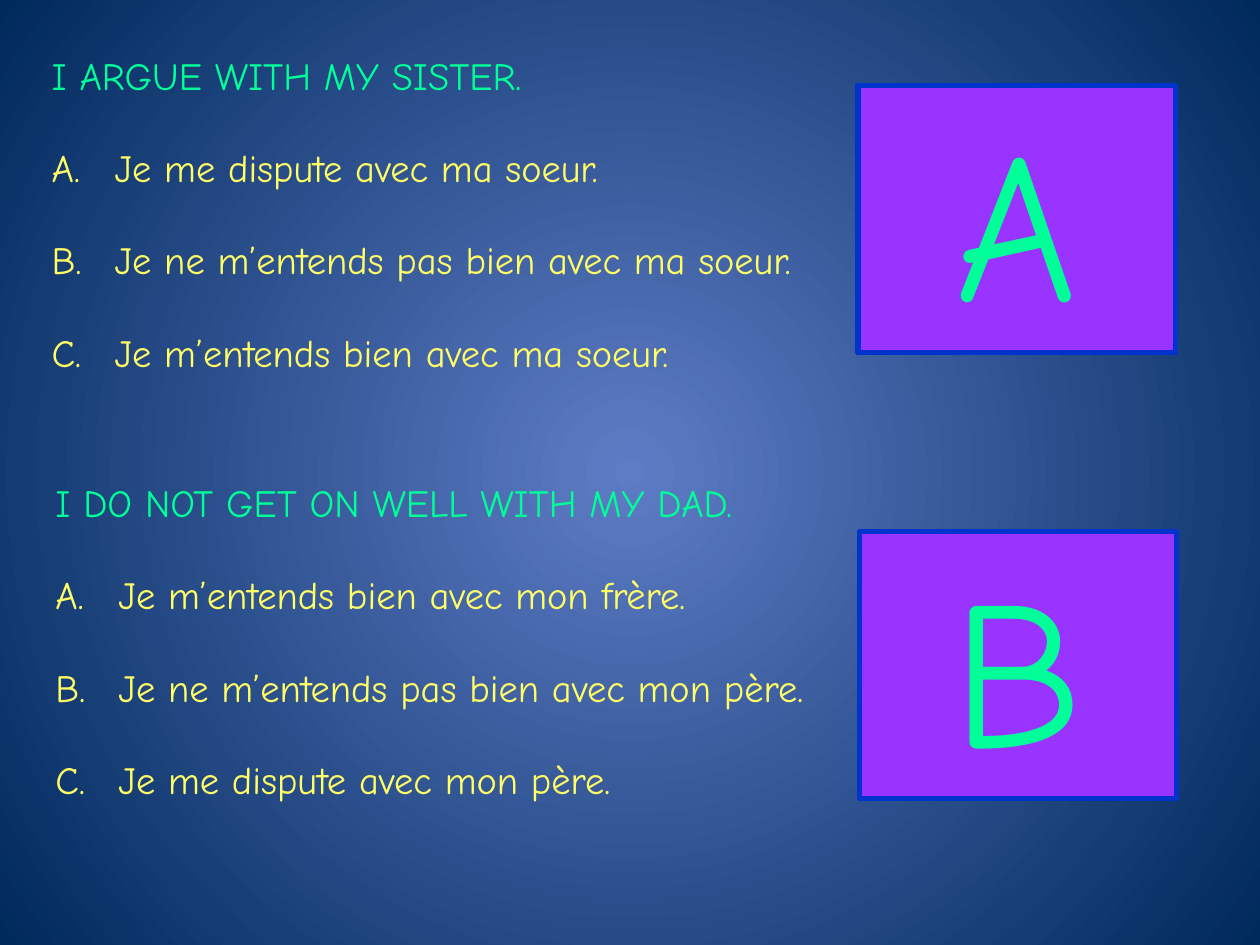
from lxml.etree import SubElement
from pptx import Presentation
from pptx.dml.color import RGBColor
from pptx.enum.shapes import MSO_SHAPE
from pptx.enum.text import MSO_ANCHOR, MSO_AUTO_SIZE, PP_ALIGN
from pptx.oxml.ns import qn
from pptx.util import Pt

FONT = "Comic Neue"
GREEN = RGBColor(0x00, 0xFF, 0x99)
YELLOW = RGBColor(0xFF, 0xFF, 0x66)
PURPLE = RGBColor(0x99, 0x33, 0xFF)
BLUE = RGBColor(0x00, 0x33, 0xCC)
GLOW = RGBColor(0x5E, 0x7C, 0xC5)
NAVY = RGBColor(0x00, 0x29, 0x5C)

# question place, question, choices, answer card place, answer
QUIZ = [
    ((22.3, 25.9, 468.7, 220.3), "I ARGUE WITH MY SISTER.",
     ["Je me dispute avec ma soeur.",
      "Je ne m’entends pas bien avec ma soeur.",
      "Je m’entends bien avec ma soeur."],
     (490.3, 49), "A"),
    ((24.5, 270, 492.5, 220.3), "I DO NOT GET ON WELL WITH MY DAD.",
     ["Je m’entends bien avec mon frère.",
      "Je ne m’entends pas bien avec mon père.",
      "Je me dispute avec mon père."],
     (491, 303.8), "B"),
]


def add_span(para, text, size, color):
    span = para.add_run()
    span.text = text
    span.font.name = FONT
    span.font.size = Pt(size)
    span.font.color.rgb = color


def set_bullet(para, indent, tag, **attributes):
    """Set a hanging indent in points and the kind of bullet."""
    props = para._p.get_or_add_pPr()
    props.set("marL", str(Pt(indent)))
    props.set("indent", str(-Pt(indent)))
    SubElement(props, qn(tag), attributes)


deck = Presentation()
deck.slide_width, deck.slide_height = Pt(720), Pt(540)
page = deck.slides.add_slide(deck.slide_layouts.get_by_name("Two Content"))
title, *bodies = page.placeholders
for unused in [title, *bodies[2:]]:
    unused.element.getparent().remove(unused.element)

# Radial background
fill = page.background.fill
fill.gradient()
for stop, color, position in zip(fill.gradient_stops, (GLOW, NAVY), (0, 1)):
    stop.color.rgb = color
    stop.position = position
gradient = page.background._cSld.find(".//" + qn("a:gradFill"))
gradient.remove(gradient.find(qn("a:lin")))
circle = SubElement(gradient, qn("a:path"), path="circle")
SubElement(circle, qn("a:fillToRect"), l="50000", t="50000", r="50000", b="50000")

for body, (place, question, choices, corner, answer) in zip(bodies, QUIZ):
    body.left, body.top, body.width, body.height = map(Pt, place)
    frame = body.text_frame
    frame.word_wrap = True
    frame.auto_size = MSO_AUTO_SIZE.NONE
    para = frame.paragraphs[0]
    para.space_before = Pt(0)
    set_bullet(para, 0, "a:buNone")
    add_span(para, question, 22, GREEN)
    for choice in choices:
        para = frame.add_paragraph()
        para.space_before = Pt(26.4)
        set_bullet(para, 36, "a:buAutoNum", type="alphaUcPeriod")
        add_span(para, choice, 22, YELLOW)

    card = page.shapes.add_shape(MSO_SHAPE.RECTANGLE, *map(Pt, (*corner, 181.4, 152.6)))
    card.shadow.inherit = False
    card.fill.solid()
    card.fill.fore_color.rgb = PURPLE
    card.line.color.rgb = BLUE
    card.line.width = Pt(3)
    frame = card.text_frame
    frame.word_wrap = True
    frame.vertical_anchor = MSO_ANCHOR.TOP
    para = frame.paragraphs[0]
    para.alignment = PP_ALIGN.CENTER
    add_span(para, answer, 120, GREEN)

deck.save("out.pptx")
